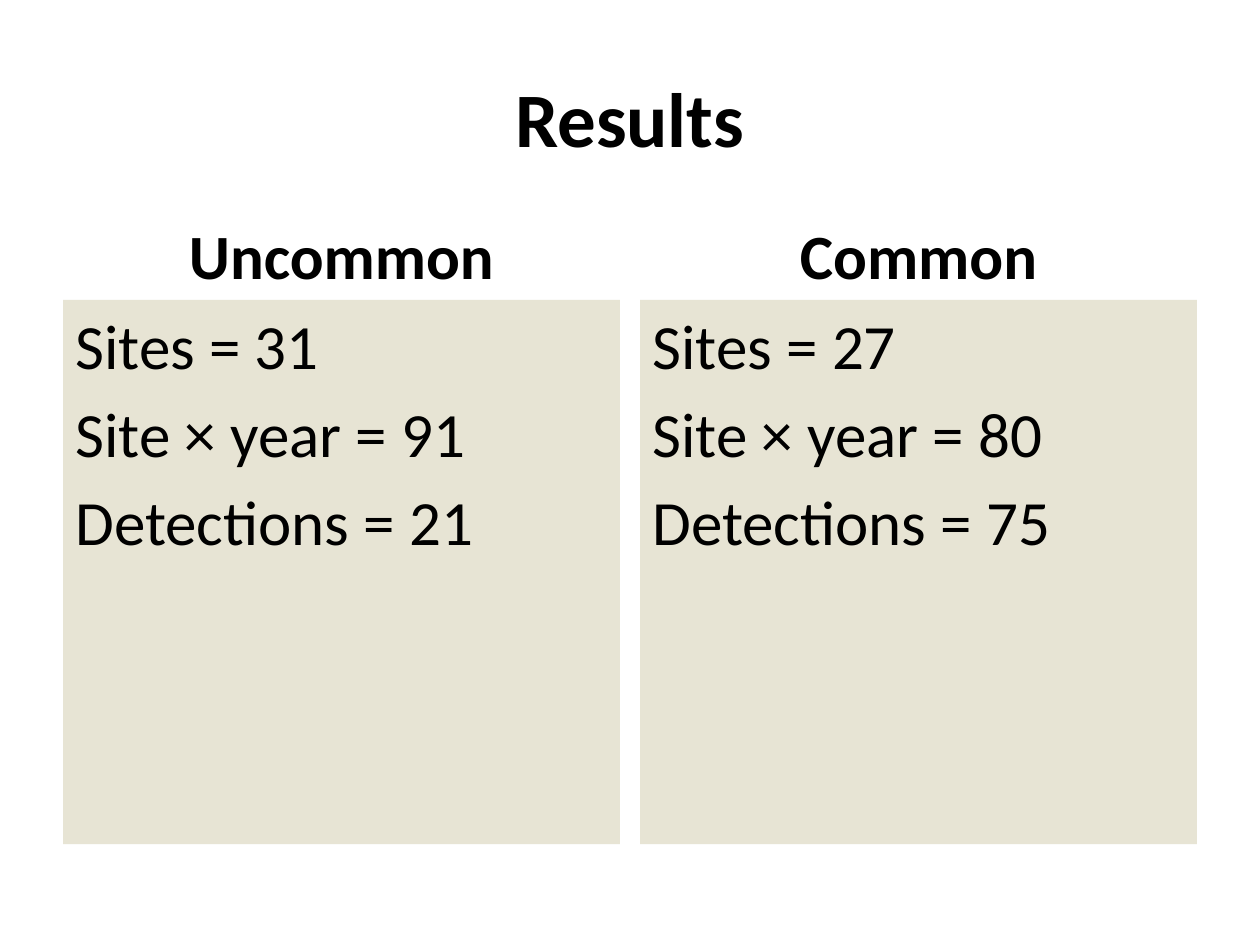
from lxml import etree
from pptx import Presentation
from pptx import util as u
from pptx.dml.color import RGBColor
from pptx.enum import shapes, text
from pptx.oxml.ns import qn

BLACK = RGBColor(0x00, 0x00, 0x00)
SAND = RGBColor(0xDD, 0xD9, 0xC3)

WIDTH, HEIGHT = 10, 7.5
MARGIN, COLUMN = 0.5, 4.42
COLUMN_STEP = WIDTH - 2 * MARGIN - COLUMN

GROUPS = [
    ("Uncommon", ["Sites = 31", "Site × year = 91", "Detections = 21"]),
    ("Common", ["Sites = 27", "Site × year = 80", "Detections = 75"]),
]


class Deck:
    """Hold the text style and the current slide, placing items by share of its size."""

    font = "Calibri"
    title_size = 44
    body_size = 36

    def __init__(self):
        self.prs = Presentation()
        self.prs.slide_width = u.Inches(WIDTH)
        self.prs.slide_height = u.Inches(HEIGHT)
        self.s = self.prs.slides.add_slide(self.prs.slide_layouts[6])

    def box(self, x, y, w, h):
        pw, ph = self.prs.slide_width, self.prs.slide_height
        return int(x * pw), int(y * ph), int(w * pw), int(h * ph)

    def set_text(self, sp, lines, size, bold, align, anchor):
        tf = sp.text_frame
        tf.word_wrap = True
        tf.vertical_anchor = anchor
        tf.text = "\n".join(lines)
        for i, p in enumerate(tf.paragraphs):
            p.alignment = align
            p.space_before = u.Pt(0.2 * size if i else 0)
            for r in p.runs:
                r.font.name = self.font
                r.font.size = u.Pt(size)
                r.font.bold = bold
                r.font.color.rgb = BLACK

    def heading(self, words, area, size, anchor):
        sp = self.s.shapes.add_textbox(*self.box(*area))
        self.set_text(sp, [words], size, True, text.PP_ALIGN.CENTER, anchor)

    def panel(self, lines, area):
        sp = self.s.shapes.add_shape(shapes.MSO_SHAPE.RECTANGLE, *self.box(*area))
        sp.shadow.inherit = False
        sp.line.fill.background()
        sp.fill.solid()
        sp.fill.fore_color.rgb = SAND
        color = sp.element.spPr.find(".//" + qn("a:srgbClr"))
        etree.SubElement(color, qn("a:alpha"), val="70000")
        self.set_text(sp, lines, self.body_size, False,
                      text.PP_ALIGN.LEFT, text.MSO_ANCHOR.TOP)


def main():
    deck = Deck()
    left, width = MARGIN / WIDTH, COLUMN / WIDTH
    deck.heading("Results", (left, 0.04, 1 - 2 * left, 1.25 / HEIGHT),
                 deck.title_size, text.MSO_ANCHOR.MIDDLE)
    for i, (name, counts) in enumerate(GROUPS):
        x = left + i * COLUMN_STEP / WIDTH
        deck.heading(name, (x, 1.67 / HEIGHT, width, 0.7 / HEIGHT),
                     deck.body_size, text.MSO_ANCHOR.BOTTOM)
        deck.panel(counts, (x, 2.38 / HEIGHT, width, 4.32 / HEIGHT))
    deck.prs.save("out.pptx")


if __name__ == "__main__":
    main()
